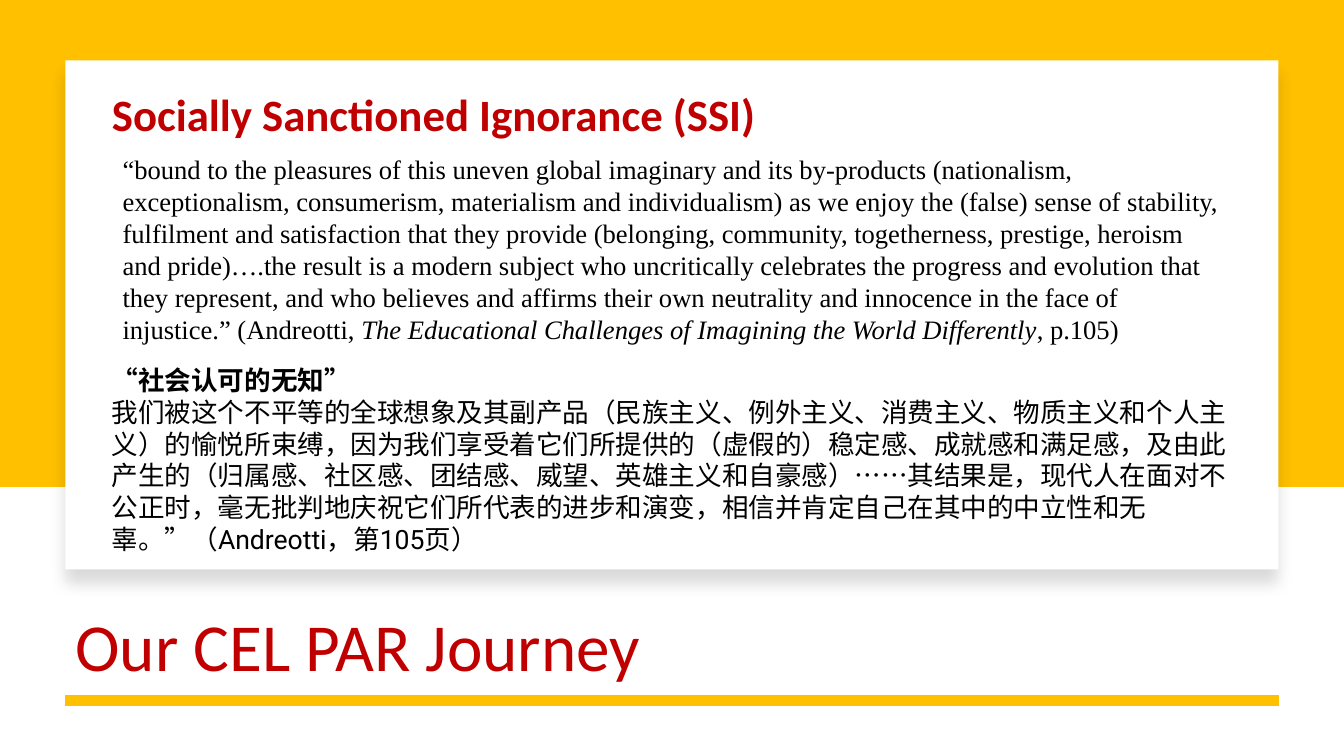
"""Builds the Socially Sanctioned Ignorance slide with English and Chinese quotations."""
import lxml.etree
import pptx
import pptx.dml.color
import pptx.enum.lang
import pptx.enum.shapes
import pptx.enum.text
import pptx.oxml.ns
import pptx.util

Cm, Pt = pptx.util.Cm, pptx.util.Pt
COLORS = {"gold": "FFC000", "white": "FFFFFF", "red": "C00000", "black": "000000"}
SLIDE_W, SLIDE_H = 33.87, 19.05
MARGIN = 1.65
BAND_H = 12.27
CARD_TOP, CARD_H = 1.52, 12.83
RULE_Y = 17.65

ENGLISH = [
    ("“bound to the pleasures of this uneven global imaginary and its by-products "
     "(nationalism, exceptionalism, consumerism, materialism and individualism) as we enjoy "
     "the (false) sense of stability, fulfilment and satisfaction that they provide "
     "(belonging, community, togetherness, prestige, heroism and pride)….the result is a "
     "modern subject who uncritically celebrates the progress and evolution that they "
     "represent, and who believes and affirms their own neutrality and innocence in the face "
     "of injustice.” (Andreotti, ", False),
    ("The Educational Challenges of Imagining the World Differently", True),
    (", p.105)", False),
]
CHINESE_HEADING = "“社会认可的无知”"
CHINESE = (
    "我们被这个不平等的全球想象及其副产品（民族主义、例外主义、消费主义、物质主义和个人主义）"
    "的愉悦所束缚，因为我们享受着它们所提供的（虚假的）稳定感、成就感和满足感，"
    "及由此产生的（归属感、社区感、团结感、威望、英雄主义和自豪感）……其结果是，"
    "现代人在面对不公正时，毫无批判地庆祝它们所代表的进步和演变，"
    "相信并肯定自己在其中的中立性和无辜。”（Andreotti，第105页）"
)
TEXTS = [
    {"box": (MARGIN, 14.33, 27.51, 4.11), "font": "Calibri", "size": 48, "color": "red",
     "spacing": 0.9, "anchor": "MIDDLE",
     "paragraphs": [(False, [("Our CEL PAR Journey", False)])]},
    {"box": (2.57, 2.06, 16.89, 3.0), "font": "Calibri", "size": 32, "color": "red",
     "wrap": False,
     "paragraphs": [(True, [("Socially Sanctioned Ignorance (SSI)", False)])]},
    {"box": (2.84, 3.73, 28.19, 5.13), "font": "Times New Roman", "size": 19,
     "color": "black", "spacing": Pt(22.8), "paragraphs": [(False, ENGLISH)]},
    {"box": (2.57, 9.04, 29.18, 5.94), "font": "Roboto", "size": 19, "color": "black",
     "spacing": Pt(22.8), "lang": "SIMPLIFIED_CHINESE",
     "paragraphs": [(True, [(CHINESE_HEADING, False)]), (False, [(CHINESE, False)])]},
]


def rgb(name):
    return pptx.dml.color.RGBColor.from_string(COLORS[name])


def add_effects(s):
    return lxml.etree.SubElement(s._element.spPr, pptx.oxml.ns.qn("a:effectLst"))


def add_rect(shapes, box, color):
    s = shapes.add_shape(pptx.enum.shapes.MSO_SHAPE.RECTANGLE, *map(Cm, box))
    s.fill.solid()
    s.fill.fore_color.rgb = rgb(color)
    s.line.fill.background()
    return s


def add_card_shadow(s):
    shadow = lxml.etree.SubElement(
        add_effects(s), pptx.oxml.ns.qn("a:outerShdw"),
        blurRad=str(Pt(11)), dist=str(Pt(10)), dir="5400000", algn="t", rotWithShape="0")
    color = lxml.etree.SubElement(shadow, pptx.oxml.ns.qn("a:srgbClr"), val=COLORS["black"])
    lxml.etree.SubElement(color, pptx.oxml.ns.qn("a:alpha"), val="15000")


def add_text(shapes, item):
    tf = shapes.add_textbox(*map(Cm, item["box"])).text_frame
    tf.word_wrap = item.get("wrap", True)
    tf.vertical_anchor = pptx.enum.text.MSO_ANCHOR[item.get("anchor", "TOP")]
    for i, (bold, runs) in enumerate(item["paragraphs"]):
        p = tf.add_paragraph() if i else tf.paragraphs[0]
        p.line_spacing = item.get("spacing")
        p.font.name = item["font"]
        p.font.size = Pt(item["size"])
        p.font.bold = bold
        p.font.color.rgb = rgb(item["color"])
        for text, italic in runs:
            r = p.add_run()
            r.text = text
            if italic:
                r.font.italic = True
            if "lang" in item:
                r.font.language_id = pptx.enum.lang.MSO_LANGUAGE_ID[item["lang"]]


def main():
    prs = pptx.Presentation()
    prs.slide_width, prs.slide_height = Cm(SLIDE_W), Cm(SLIDE_H)
    shapes = prs.slides.add_slide(prs.slide_layouts[6]).shapes
    right = SLIDE_W - MARGIN

    band = add_rect(shapes, (0, 0, SLIDE_W, BAND_H), "gold")
    band.shadow.inherit = False
    card = add_rect(shapes, (MARGIN, CARD_TOP, right - MARGIN, CARD_H), "white")
    add_card_shadow(card)

    rule = shapes.add_connector(pptx.enum.shapes.MSO_CONNECTOR.STRAIGHT,
                                Cm(right), Cm(RULE_Y), Cm(MARGIN), Cm(RULE_Y))
    rule.line.color.rgb = rgb("gold")
    rule.line.width = Pt(8)
    add_effects(rule)

    for item in TEXTS:
        add_text(shapes, item)
    prs.save("out.pptx")


if __name__ == "__main__":
    main()
